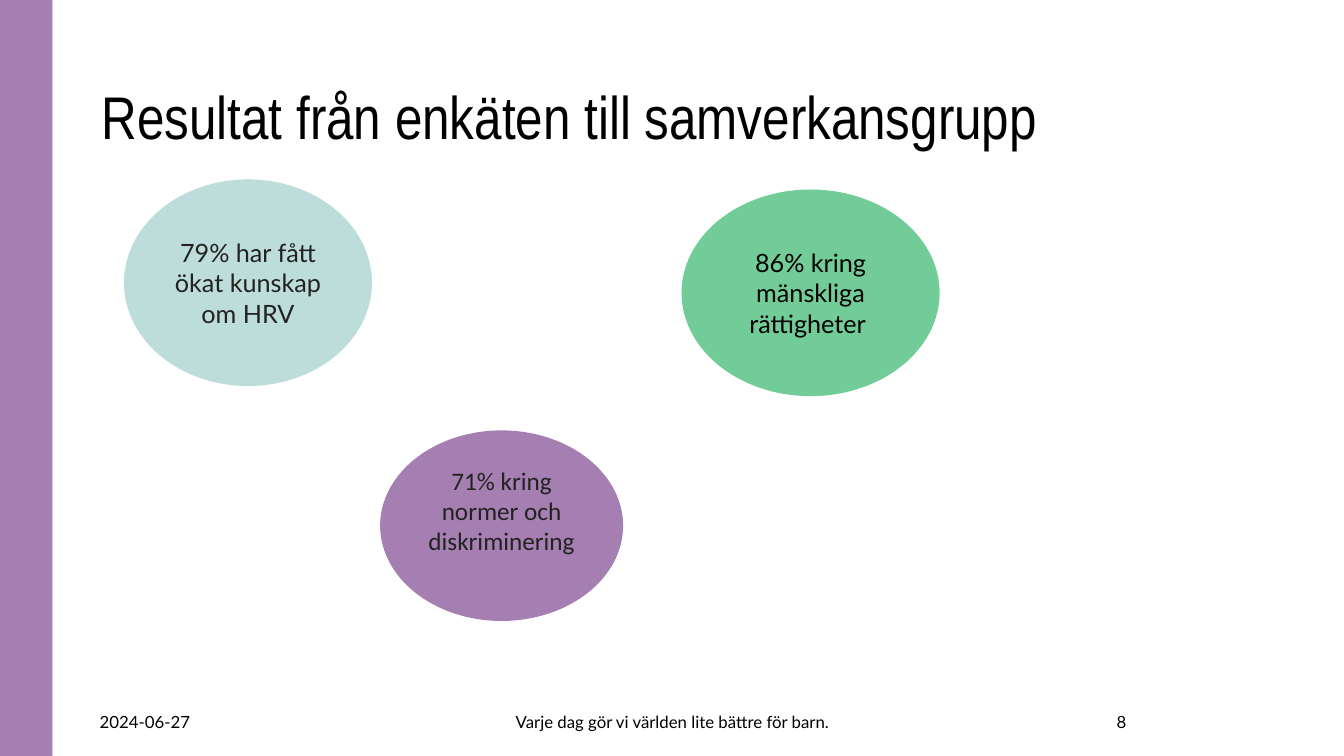
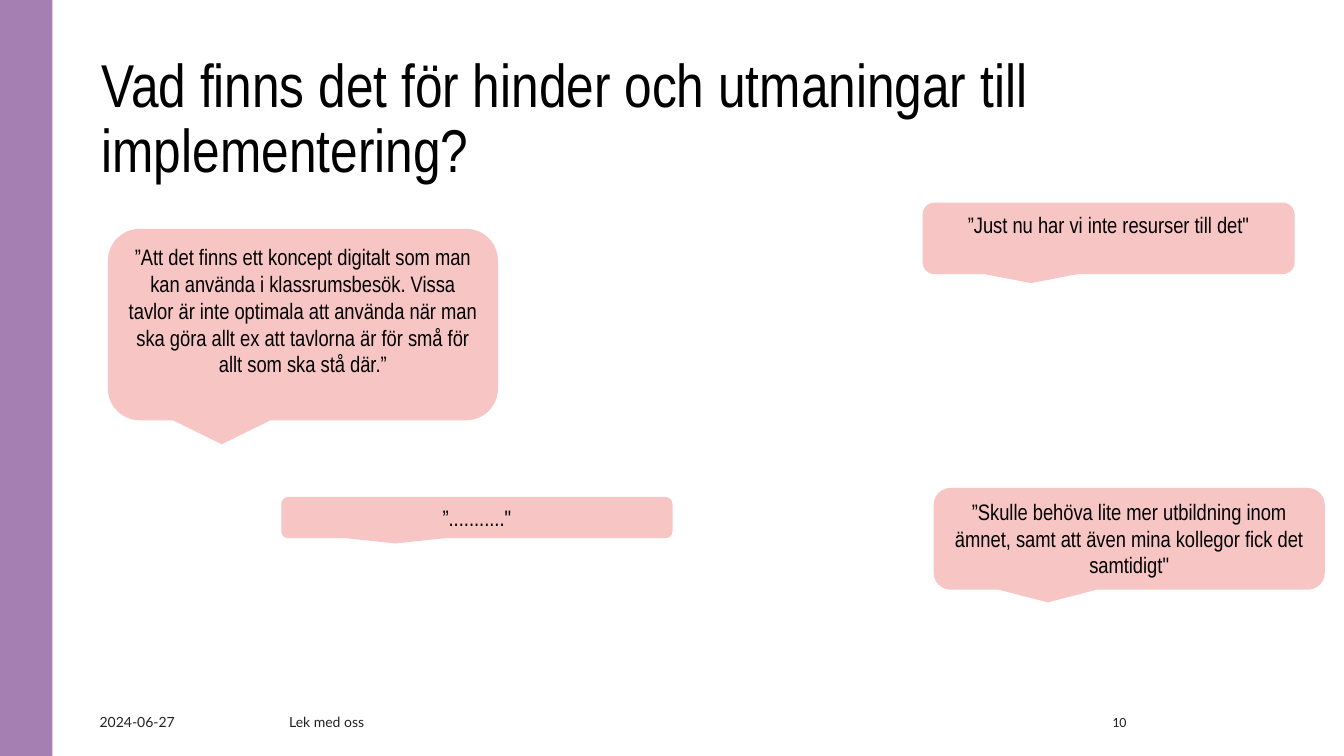
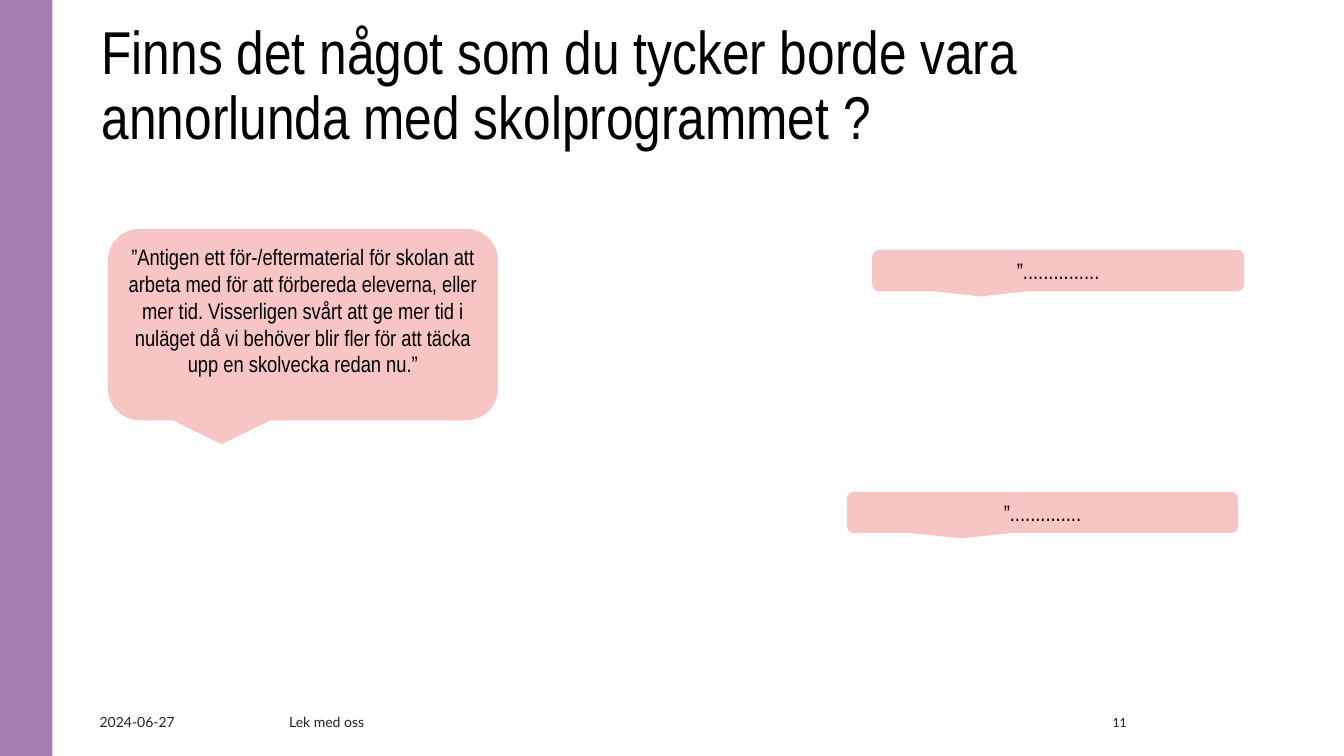
from dataclasses import dataclass

from pptx import Presentation
from pptx.dml.color import RGBColor
from pptx.enum.shapes import MSO_SHAPE
from pptx.enum.text import MSO_ANCHOR, PP_ALIGN
from pptx.util import Inches, Pt

RECTANGLE = MSO_SHAPE.RECTANGLE
CIRCLE = MSO_SHAPE.FLOWCHART_CONNECTOR
CALLOUT = MSO_SHAPE.ROUNDED_RECTANGULAR_CALLOUT
TOP, MIDDLE = MSO_ANCHOR.TOP, MSO_ANCHOR.MIDDLE
LEFT, CENTER, RIGHT = PP_ALIGN.LEFT, PP_ALIGN.CENTER, PP_ALIGN.RIGHT


@dataclass(frozen=True)
class Theme:
    purple: str = "A57FB2"
    teal: str = "BDDDDA"
    green: str = "71CC98"
    pink: str = "F8C5C5"
    black: str = "000000"
    dark: str = "222221"
    narrow: str = "Arial Narrow"
    lato: str = "Lato"
    calibri: str = "Calibri"
    title_size: float = 43.2
    survey_title_size: float = 43
    circle_size: float = 18
    quote_size: float = 16
    footer_size: float = 12
    small_footer_size: float = 10


theme = Theme()


def add_filled_shape(slide, kind, box, fill):
    shape = slide.shapes.add_shape(kind, *[Inches(value) for value in box])
    shape.shadow.inherit = False
    shape.fill.solid()
    shape.fill.fore_color.rgb = RGBColor.from_string(fill)
    shape.line.fill.background()
    return shape


def set_text(shape, text, font, size, color, align=CENTER, anchor=MIDDLE):
    frame = shape.text_frame
    frame.text = text
    frame.word_wrap = True
    frame.vertical_anchor = anchor
    paragraph = frame.paragraphs[0]
    paragraph.alignment = align
    run_font = paragraph.runs[0].font
    run_font.name = font
    run_font.size = Pt(size)
    run_font.color.rgb = RGBColor.from_string(color)
    return paragraph


# Slide content: title, title top and size, footer style, circles and quotes
date = "2024-06-27"
slogan_footer = ("Varje dag gör vi världen lite bättre för barn.", CENTER,
                 theme.footer_size, theme.black, theme.lato)
play_footer = ("Lek med oss", LEFT,
               theme.small_footer_size, theme.dark, theme.calibri)

slide_contents = [
    {
        "title": "Resultat från enkäten till samverkansgrupp",
        "title_top": 0.7,
        "title_size": theme.survey_title_size,
        "footer": slogan_footer,
        "number": "8",
        "circles": [
            ((1.23, 1.78, 2.46, 2.05), theme.teal, theme.lato, theme.dark, 0.05,
             "79% har fått ökat kunskap om HRV"),
            ((6.76, 1.88, 2.56, 2.05), theme.green, theme.lato, theme.black, 0.05,
             "86% kring mänskliga rättigheter "),
            ((3.77, 4.27, 2.41, 1.89), theme.purple, theme.calibri, theme.dark, 0.35,
             "71% kring normer och diskriminering"),
        ],
        "quotes": [],
    },
    {
        "title": "Vad finns det för hinder och utmaningar till implementering?",
        "title_top": 0.7,
        "title_size": theme.title_size,
        "footer": play_footer,
        "number": "10",
        "circles": [],
        "quotes": [
            ((9.15, 2.01, 3.69, 0.71), "”Just nu har vi inte resurser till det\""),
            ((1.07, 2.27, 3.87, 1.9),
             "”Att det finns ett koncept digitalt som man kan använda i "
             "klassrumsbesök. Vissa tavlor är inte optimala att använda när man "
             "ska göra allt ex att tavlorna är för små för allt som ska stå där.”"),
            ((9.26, 4.84, 3.88, 1.01),
             "”Skulle behöva lite mer utbildning inom ämnet, samt att även mina "
             "kollegor fick det samtidigt\""),
            ((2.79, 4.93, 3.88, 0.41), "”...........\""),
        ],
    },
    {
        "title": "Finns det något som du tycker borde vara annorlunda med "
                 "skolprogrammet ?",
        "title_top": 0.37,
        "title_size": theme.title_size,
        "footer": play_footer,
        "number": "11",
        "circles": [],
        "quotes": [
            ((8.65, 2.48, 3.69, 0.41), "”..............."),
            ((1.07, 2.27, 3.87, 1.9),
             "”Antigen ett för-/eftermaterial för skolan att arbeta med för att "
             "förbereda eleverna, eller mer tid. Visserligen svårt att ge mer tid "
             "i nuläget då vi behöver blir fler för att täcka upp en skolvecka "
             "redan nu.”"),
            ((8.4, 4.88, 3.88, 0.41), "”.............."),
        ],
    },
]

presentation = Presentation()
presentation.slide_width = Inches(13.33)
presentation.slide_height = Inches(7.5)
blank_layout = presentation.slide_layouts[6]

for content in slide_contents:
    slide = presentation.slides.add_slide(blank_layout)

    # Side band and title
    add_filled_shape(slide, RECTANGLE, (0, 0, 0.52, 7.5), theme.purple)
    title = slide.shapes.add_textbox(
        Inches(0.91), Inches(content["title_top"]), Inches(10.42), Inches(0.99))
    paragraph = set_text(title, content["title"], theme.narrow,
                         content["title_size"], theme.black, LEFT)
    paragraph.line_spacing = 0.9

    # Footer: date, message and slide number side by side
    message, message_align, size, color, number_font = content["footer"]
    left = 0.89
    for width, text, align, font in [
        (1.88, date, LEFT, theme.lato),
        (7.8, message, message_align, theme.lato),
        (0.7, content["number"], RIGHT, number_font),
    ]:
        footer = slide.shapes.add_textbox(
            Inches(left), Inches(7.06), Inches(width), Inches(0.2))
        footer.text_frame.margin_top = footer.text_frame.margin_bottom = 0
        set_text(footer, text, font, size, color, align)
        left += width

    # Survey results
    for box, fill, font, color, bottom_margin, text in content["circles"]:
        circle = add_filled_shape(slide, CIRCLE, box, fill)
        circle.text_frame.margin_bottom = Inches(bottom_margin)
        set_text(circle, text, font, theme.circle_size, color)

    # Quotes
    for box, text in content["quotes"]:
        quote = add_filled_shape(slide, CALLOUT, box, theme.pink)
        set_text(quote, text, theme.narrow, theme.quote_size, theme.black, anchor=TOP)

presentation.save("out.pptx")
